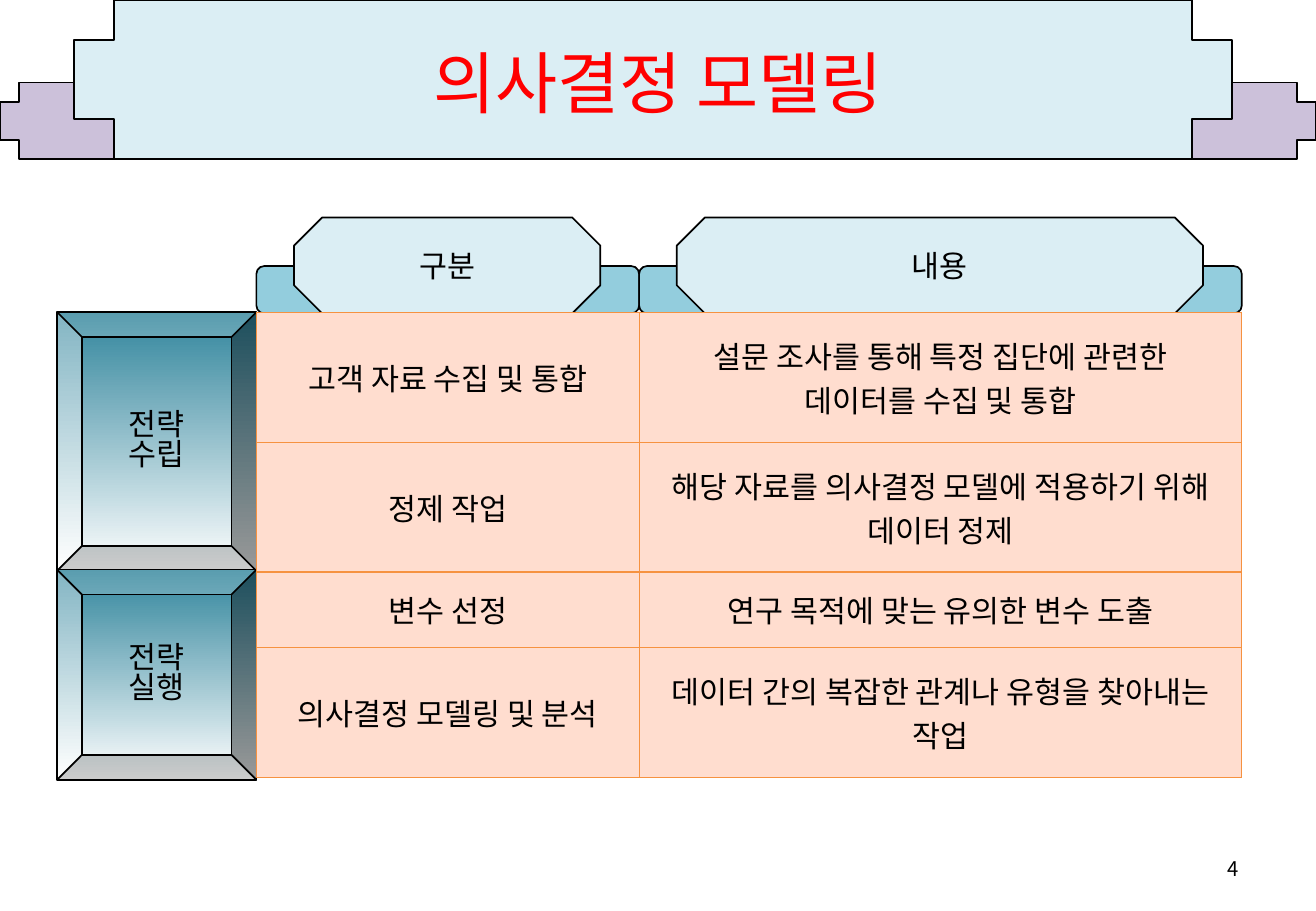
"""Build the decision modeling slide with its banner, headers, stages and table."""
from dataclasses import dataclass
from lxml.etree import SubElement
from pptx import Presentation
from pptx.dml.color import RGBColor
from pptx.enum.shapes import MSO_SHAPE
from pptx.enum.text import MSO_ANCHOR, PP_ALIGN
from pptx.oxml.ns import qn
from pptx.util import Inches, Pt


@dataclass(frozen=True)
class Theme:
    font: str = "Noto Sans CJK KR"
    ink: str = "000000"
    red: str = "FF0000"
    pale: str = "DBEEF4"
    lilac: str = "CCC1DA"
    sky: str = "93CDDD"
    teal: str = "31859C"
    white: str = "FFFFFF"
    peach: str = "FFDDCF"
    edge: str = "F69240"
    head: int = 40
    body: int = 18
    small: int = 12


theme = Theme()


def write(frame, text, size=theme.body, color=theme.ink, align=PP_ALIGN.CENTER, space=1.0):
    """Fill a text frame and format its runs."""
    frame.text = text
    frame.word_wrap = True
    frame.vertical_anchor = MSO_ANCHOR.MIDDLE
    for para in frame.paragraphs:
        para.alignment = align
        para.line_spacing = space
        for run in para.runs:
            run.font.size = Pt(size)
            run.font.color.rgb = RGBColor.from_string(color)
            run.font.name = theme.font
            SubElement(run._r.get_or_add_rPr(), qn("a:ea"), typeface=theme.font)


def draw(kind, box, color):
    """Add an outlined preset shape with a solid fill."""
    shape = slide.shapes.add_shape(kind, *map(Inches, box))
    shape.shadow.inherit = False
    shape.fill.solid()
    shape.fill.fore_color.rgb = RGBColor.from_string(color)
    shape.line.color.rgb = RGBColor.from_string(theme.ink)
    shape.line.width = Pt(1)
    return shape


deck = Presentation()
deck.slide_width, deck.slide_height = Inches(10.83), Inches(7.5)
slide = deck.slides.add_slide(deck.slide_layouts[5])

draw(MSO_SHAPE.CROSS, (0, 0.68, 10.83, 0.63), theme.lilac)
draw(MSO_SHAPE.CROSS, (0.61, 0, 9.53, 1.31), theme.pale)

title = slide.shapes.title
title.left, title.top, title.width, title.height = map(Inches, (0.54, 0.05, 9.75, 1.25))
write(title.text_frame, "의사결정 모델링", theme.head, theme.red)
title.element.getparent().append(title.element)

page = slide.shapes.add_textbox(*map(Inches, (7.76, 6.95, 2.53, 0.4)))
write(page.text_frame, "4", theme.small, align=PP_ALIGN.RIGHT)

left, top = 2.11, 2.57
cols = (3.15, 4.96)
x = left
for label, width in zip(("구분", "내용"), cols):
    draw(MSO_SHAPE.ROUNDED_RECTANGLE, (x, 2.19, width, 0.39), theme.sky)
    plate = draw(MSO_SHAPE.OCTAGON, (x + 0.31, 1.79, width - 0.63, 0.79), theme.pale)
    write(plate.text_frame, label)
    x += width

stages = (("전략\n수립", 2.57, 2.13), ("전략\n실행", 4.69, 1.73))
for label, y, height in stages:
    stage = draw(MSO_SHAPE.BEVEL, (0.47, y, 1.64, height), theme.teal)
    stage.fill.gradient()
    stage.fill.gradient_angle = 270
    for stop, color in zip(stage.fill.gradient_stops, (theme.teal, theme.white)):
        stop.color.rgb = RGBColor.from_string(color)
    write(stage.text_frame, label, space=0.82)

rows = (
    (1.07, "고객 자료 수집 및 통합", "설문 조사를 통해 특정 집단에 관련한 데이터를 수집 및 통합"),
    (1.07, "정제 작업", "해당 자료를 의사결정 모델에 적용하기 위해 데이터 정제"),
    (0.62, "변수 선정", "연구 목적에 맞는 유의한 변수 도출"),
    (1.07, "의사결정 모델링 및 분석", "데이터 간의 복잡한 관계나 유형을 찾아내는 작업"),
)
high = sum(row[0] for row in rows)
table = slide.shapes.add_table(
    len(rows), len(cols), *map(Inches, (left, top, sum(cols), high))).table
table.first_row = table.horz_banding = False
for column, width in zip(table.columns, cols):
    column.width = Inches(width)
for r, (height, *texts) in enumerate(rows):
    table.rows[r].height = Inches(height)
    for c, text in enumerate(texts):
        cell = table.cell(r, c)
        write(cell.text_frame, text)
        cell.vertical_anchor = MSO_ANCHOR.MIDDLE
        cell.margin_left = cell.margin_right = Inches(0.15)
        props = cell._tc.get_or_add_tcPr()
        for side in ("a:lnL", "a:lnR", "a:lnT", "a:lnB"):
            line = SubElement(props, qn(side), w=str(Pt(0.75)))
            SubElement(SubElement(line, qn("a:solidFill")), qn("a:srgbClr"), val=theme.edge)
        cell.fill.solid()
        cell.fill.fore_color.rgb = RGBColor.from_string(theme.peach)

deck.save("out.pptx")
